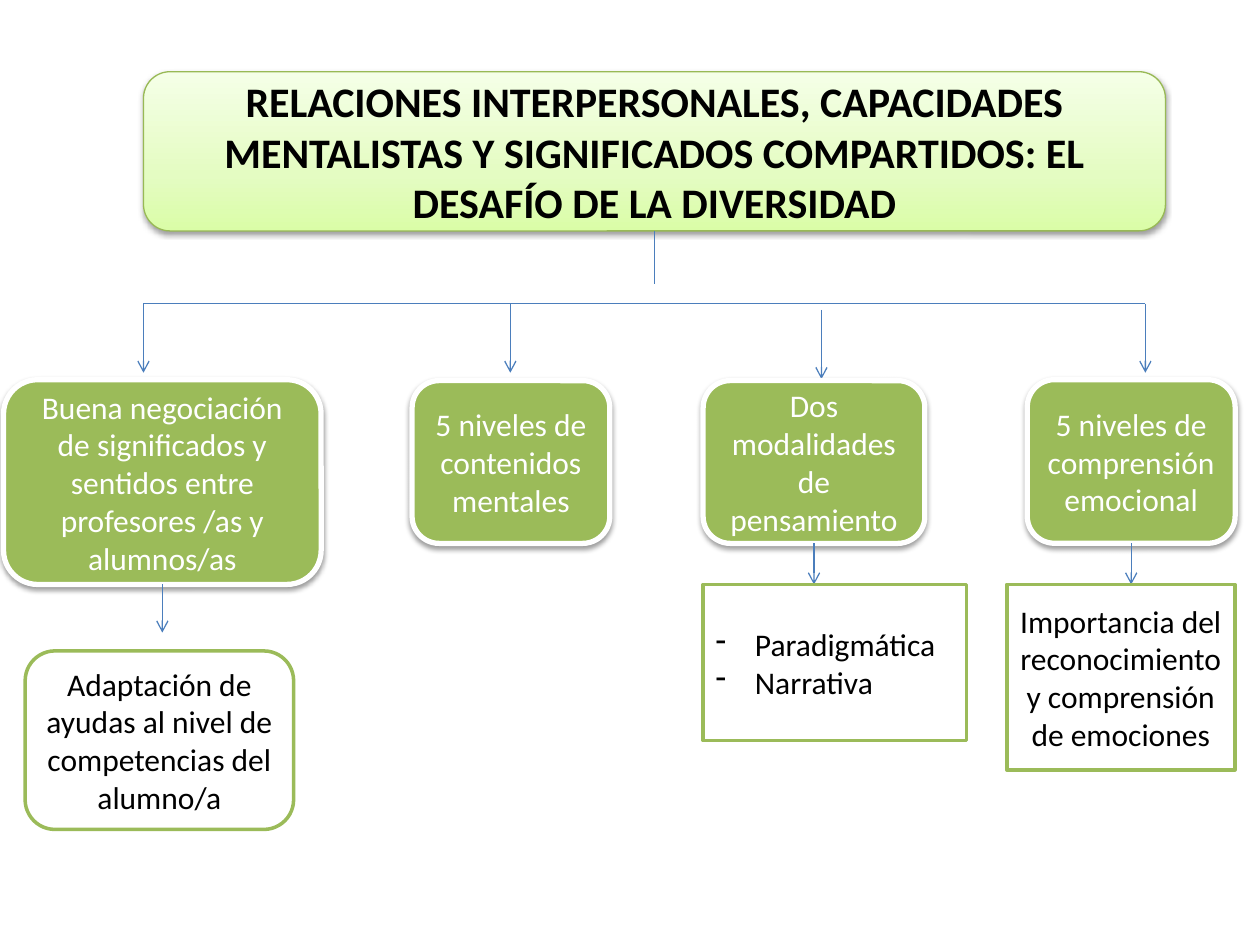
from pptx import Presentation
from pptx.dml.color import RGBColor
from pptx.enum.shapes import MSO_CONNECTOR as Connector, MSO_SHAPE as Shape
from pptx.enum.text import MSO_ANCHOR as Anchor, PP_ALIGN as Align
from pptx.oxml.ns import qn
from pptx.util import Pt
from lxml.etree import SubElement

COLORS = {
    "green": "9BBB59",
    "title_line": "98B955",
    "arrow": "4B7EBC",
    "white": "FFFFFF",
    "black": "000000",
}
TITLE_GRADIENT = [(0, "DAFDA7"), (35, "E4FCC2"), (100, "F5FFE7")]
BOTTOM = 2


def rgb(name):
    return RGBColor.from_string(COLORS[name])


def write_text(frame, text, size=18, color="black", bold=False, dashes=False):
    """Fill the frame with one paragraph per line, dashed or centred."""
    frame.word_wrap = True
    frame.vertical_anchor = Anchor.MIDDLE
    for index, line in enumerate(text.split("\n")):
        para = frame.paragraphs[0] if index == 0 else frame.add_paragraph()
        para.alignment = Align.LEFT if dashes else Align.CENTER
        if dashes:
            props = para._p.get_or_add_pPr()
            props.set("marL", str(Pt(22.5)))
            props.set("indent", str(-Pt(22.5)))
            SubElement(props, qn("a:buChar"), char="-")
        span = para.add_run()
        span.text = line
        span.font.name = "Calibri"
        span.font.size = Pt(size)
        span.font.bold = bold
        span.font.color.rgb = rgb(color)


class Diagram:
    def __init__(self, slide):
        self.slide = slide

    def box(self, place, text, shape=Shape.ROUNDED_RECTANGLE, fill="white",
            line="green", width=2, shadow=False, **text_format):
        box = self.slide.shapes.add_shape(shape, *map(Pt, place))
        box.fill.solid()
        box.fill.fore_color.rgb = rgb(fill)
        box.line.color.rgb = rgb(line)
        box.line.width = Pt(width)
        box.shadow.inherit = False
        if shadow:
            self.add_shadow(box)
        write_text(box.text_frame, text, **text_format)
        return box

    def add_shadow(self, box):
        effects = box._element.spPr.find(qn("a:effectLst"))
        outer = SubElement(effects, qn("a:outerShdw"), blurRad=str(Pt(3.1)),
                           dist=str(Pt(1.6)), dir="5400000", rotWithShape="0")
        color = SubElement(outer, qn("a:srgbClr"), val=COLORS["black"])
        SubElement(color, qn("a:alpha"), val="38000")

    def title(self, place, text):
        box = self.box(place, text, line="title_line", width=0.75,
                       shadow=True, size=24, bold=True)
        box.fill.gradient()
        box.fill.gradient_angle = 90
        stops = box._element.spPr.find(qn("a:gradFill")).find(qn("a:gsLst"))
        stops.clear()
        for percent, color in TITLE_GRADIENT:
            stop = SubElement(stops, qn("a:gs"), pos=str(percent * 1000))
            SubElement(stop, qn("a:srgbClr"), val=color)
        return box

    def topic(self, place, text):
        return self.box(place, text, fill="green", line="white", width=3,
                        shadow=True, color="white")

    def line(self, start, end, arrow=True):
        line = self.slide.shapes.add_connector(
            Connector.STRAIGHT, *map(Pt, (*start, *end)))
        line.line.color.rgb = rgb("arrow")
        line.line.width = Pt(0.75)
        if arrow:
            SubElement(line.line._get_or_add_ln(), qn("a:tailEnd"), type="arrow")
        SubElement(line._element.spPr, qn("a:effectLst"))
        return line

    def drop(self, box, end_y, arrow=True):
        """Draw a vertical line down from the middle of the box's bottom."""
        x = (box.left + box.width / 2) / Pt(1)
        line = self.line((x, (box.top + box.height) / Pt(1)), (x, end_y), arrow)
        line.begin_connect(box, BOTTOM)


def main():
    deck = Presentation()
    deck.slide_width, deck.slide_height = Pt(720), Pt(540)
    diagram = Diagram(deck.slides.add_slide(deck.slide_layouts[6]))

    title = diagram.title(
        (82, 41, 584, 91),
        "RELACIONES INTERPERSONALES, CAPACIDADES MENTALISTAS Y "
        "SIGNIFICADOS COMPARTIDOS: EL DESAFÍO DE LA DIVERSIDAD")
    diagram.drop(title, 162, arrow=False)

    bus_y, left_x, right_x = 173.5, 82, 654.5
    diagram.line((left_x, bus_y), (right_x, bus_y), arrow=False)
    for x, offset in ((left_x, 0), (291.6, 0), (469.4, 3.6), (right_x, 0)):
        top = bus_y + offset
        diagram.line((x, top), (x, top + 39.5))

    negotiation = diagram.topic(
        (2, 217, 181.5, 117),
        "Buena negociación de significados y sentidos entre "
        "profesores /as y alumnos/as")
    diagram.topic((235.5, 217.5, 113, 93), "5 niveles de contenidos mentales")
    thinking = diagram.topic((401.8, 217.5, 126.7, 93),
                             "Dos modalidades de pensamiento")
    emotion = diagram.topic((587, 217, 118.8, 93.5),
                            "5 niveles de comprensión emocional")

    detail_y = 334
    diagram.drop(negotiation, 361.5)
    diagram.drop(thinking, detail_y)
    diagram.drop(emotion, detail_y)

    diagram.box((14.4, 372, 153.4, 102),
                "Adaptación de ayudas al nivel de competencias del alumno/a")
    diagram.box((401.8, detail_y, 150.5, 89.3), "Paradigmática\nNarrativa",
                shape=Shape.RECTANGLE, dashes=True)
    diagram.box((575.3, detail_y, 130.3, 106),
                "Importancia del reconocimiento y comprensión de emociones",
                shape=Shape.RECTANGLE)

    deck.save("out.pptx")


if __name__ == "__main__":
    main()
